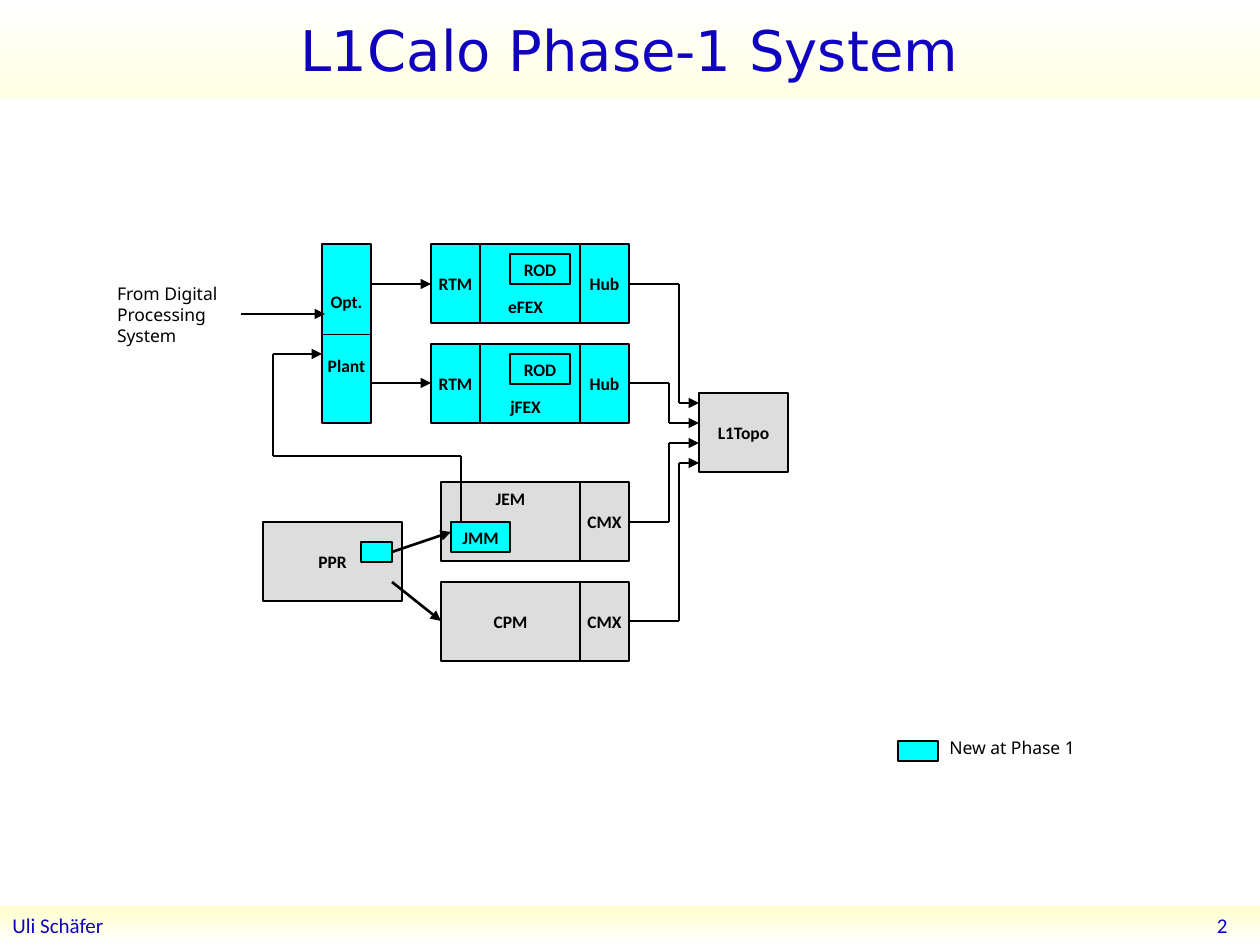
"""Build the L1Calo Phase-1 system block diagram slide."""
import itertools

import lxml.etree
import pptx
import pptx.dml.color
import pptx.enum.shapes
import pptx.enum.text
import pptx.oxml.ns
import pptx.util

RGBColor = pptx.dml.color.RGBColor
ALIGN = pptx.enum.text.PP_ALIGN
ANCHOR = pptx.enum.text.MSO_ANCHOR

BLACK = RGBColor(0, 0, 0)
WHITE = RGBColor(255, 255, 255)
BLUE = RGBColor(15, 1, 191)
CYAN = RGBColor(0, 255, 255)
GRAY = RGBColor(221, 221, 221)
PALE = RGBColor(255, 255, 227)
CREAM = RGBColor(255, 255, 204)

SCALE = 914400 / 126
PAGE_WIDTH, PAGE_HEIGHT = 1260, 945
ROW_HEIGHT = 79
CELL_WIDTH = 49
MODULE_LEFT, HUB_LEFT = 441, 580
HUB_RIGHT = HUB_LEFT + CELL_WIDTH + 1

FEX_ROWS = [("jFEX", 344), ("eFEX", 244)]
OLD_ROWS = [("JEM", 482, ANCHOR.TOP), ("CPM", 582, ANCHOR.MIDDLE)]

SINGLE_BLOCKS = [
    ("PPR", (263, 522, 139, ROW_HEIGHT), GRAY),
    ("L1Topo", (699, 393, 89, ROW_HEIGHT), GRAY),
    ("JMM", (451, 522, 59, 30), CYAN),
    ("", (361, 542, 31, 20), CYAN),
    ("", (898, 741, 40, 20), CYAN),
]

ARROWS = [
    [(241, 314), (325, 314)],
    [(392, 552), (451, 532)],
    [(392, 582), (441, 621)],
    [(372, 284), (431, 284)],
    [(372, 383), (431, 383)],
    [(461, 522), (461, 456), (273, 456), (273, 354), (322, 354)],
    [(HUB_RIGHT, 284), (679, 284), (679, 403), (699, 403)],
    [(HUB_RIGHT, 383), (669, 383), (669, 423), (699, 423)],
    [(HUB_RIGHT, 522), (669, 522), (669, 443), (699, 443)],
    [(HUB_RIGHT, 621), (679, 621), (679, 463), (699, 463)],
]


def px(value):
    return pptx.util.Emu(round(value * SCALE))


def write(shape, lines, size, font, color, align, anchor, bold=False, wrap=False):
    frame = shape.text_frame
    frame.word_wrap = wrap
    frame.vertical_anchor = anchor
    for index, line in enumerate(lines):
        para = frame.paragraphs[0] if index == 0 else frame.add_paragraph()
        para.text = line
        para.alignment = align
        para.font.size = pptx.util.Pt(size)
        para.font.name = font
        para.font.bold = bold
        para.font.color.rgb = color
    return frame


def add_rectangle(page, bounds):
    box = page.shapes.add_shape(
        pptx.enum.shapes.MSO_SHAPE.RECTANGLE, *map(px, bounds))
    box.shadow.inherit = False
    return box


def add_block(page, label, bounds, color, anchor=ANCHOR.MIDDLE):
    box = add_rectangle(page, bounds)
    box.fill.solid()
    box.fill.fore_color.rgb = color
    box.line.color.rgb = BLACK
    box.line.width = pptx.util.Pt(0.75)
    if label:
        write(box, label.split("\n"), 10, "Calibri", BLACK, ALIGN.CENTER, anchor, True)
    return box


def add_band(page, bounds, top_color, bottom_color):
    band = add_rectangle(page, bounds)
    band.fill.gradient()
    band.fill.gradient_angle = 270
    for stop, color in zip(band.fill.gradient_stops, (top_color, bottom_color)):
        stop.color.rgb = color
    band.line.fill.background()
    return band


def add_label(page, text, bounds, size, font, color, align, anchor, wrap=False):
    box = page.shapes.add_textbox(*map(px, bounds))
    return write(box, [text], size, font, color, align, anchor, wrap=wrap)


def add_line(page, start, end, width=1.5, arrow=False):
    line = page.shapes.add_connector(
        pptx.enum.shapes.MSO_CONNECTOR.STRAIGHT, *map(px, start + end))
    line.line.color.rgb = BLACK
    line.line.width = pptx.util.Pt(width)
    properties = line._element.spPr
    if arrow:
        outline = properties.find(pptx.oxml.ns.qn("a:ln"))
        lxml.etree.SubElement(outline, pptx.oxml.ns.qn("a:tailEnd"), type="triangle")
    lxml.etree.SubElement(properties, pptx.oxml.ns.qn("a:effectLst"))


def add_modules(page):
    for label, top in FEX_ROWS:
        add_block(page, label, (471, top, 109, ROW_HEIGHT), CYAN, ANCHOR.BOTTOM)
        add_block(page, "RTM", (431, top, CELL_WIDTH, ROW_HEIGHT), CYAN)
        add_block(page, "Hub", (HUB_LEFT, top, CELL_WIDTH, ROW_HEIGHT), CYAN)
        add_block(page, "ROD", (510, top + 10, 60, 30), CYAN)
    for label, top, anchor in OLD_ROWS:
        width = HUB_LEFT - MODULE_LEFT
        add_block(page, label, (MODULE_LEFT, top, width, ROW_HEIGHT), GRAY, anchor)
        add_block(page, "CMX", (HUB_LEFT, top, CELL_WIDTH, ROW_HEIGHT), GRAY)
    for label, bounds, color in SINGLE_BLOCKS:
        add_block(page, label, bounds, color)
    plant = add_block(page, "Opt.\nPlant", (322, 244, CELL_WIDTH, 179), CYAN)
    plant.text_frame.paragraphs[1].space_before = pptx.util.Pt(24.4)
    add_line(page, (322, 334), (372, 334), 0.5)


def add_arrows(page):
    for points in ARROWS:
        for start, end in itertools.pairwise(points):
            add_line(page, start, end, arrow=end == points[-1])


def main():
    deck = pptx.Presentation()
    deck.slide_width, deck.slide_height = px(PAGE_WIDTH), px(PAGE_HEIGHT)
    page = deck.slides.add_slide(deck.slide_layouts[6])

    title = add_band(page, (0, 0, PAGE_WIDTH, 98), WHITE, PALE)
    write(title, ["L1Calo Phase-1 System"], 32, "DejaVu Sans", BLUE,
          ALIGN.CENTER, ANCHOR.MIDDLE, wrap=True)
    footer = add_band(page, (0, 906, PAGE_WIDTH, 39), CREAM, WHITE)
    write(footer, ["Uli Schäfer"], 12, "Calibri", BLUE,
          ALIGN.LEFT, ANCHOR.MIDDLE, wrap=True)
    add_label(page, "2", (974, 905, 266, 40), 12, "Calibri", BLUE,
              ALIGN.RIGHT, ANCHOR.MIDDLE, True)

    add_modules(page)
    add_arrows(page)
    origin = add_label(page, "From Digital Processing System", (117, 277, 118, 76),
                       10, "Noto Sans", BLACK, ALIGN.LEFT, ANCHOR.TOP, True)
    origin.margin_left = origin.margin_right = 0
    add_label(page, "New at Phase 1", (937, 731, 155, 34), 10, "Noto Sans",
              BLACK, ALIGN.LEFT, ANCHOR.TOP)
    deck.save("out.pptx")


if __name__ == "__main__":
    main()
